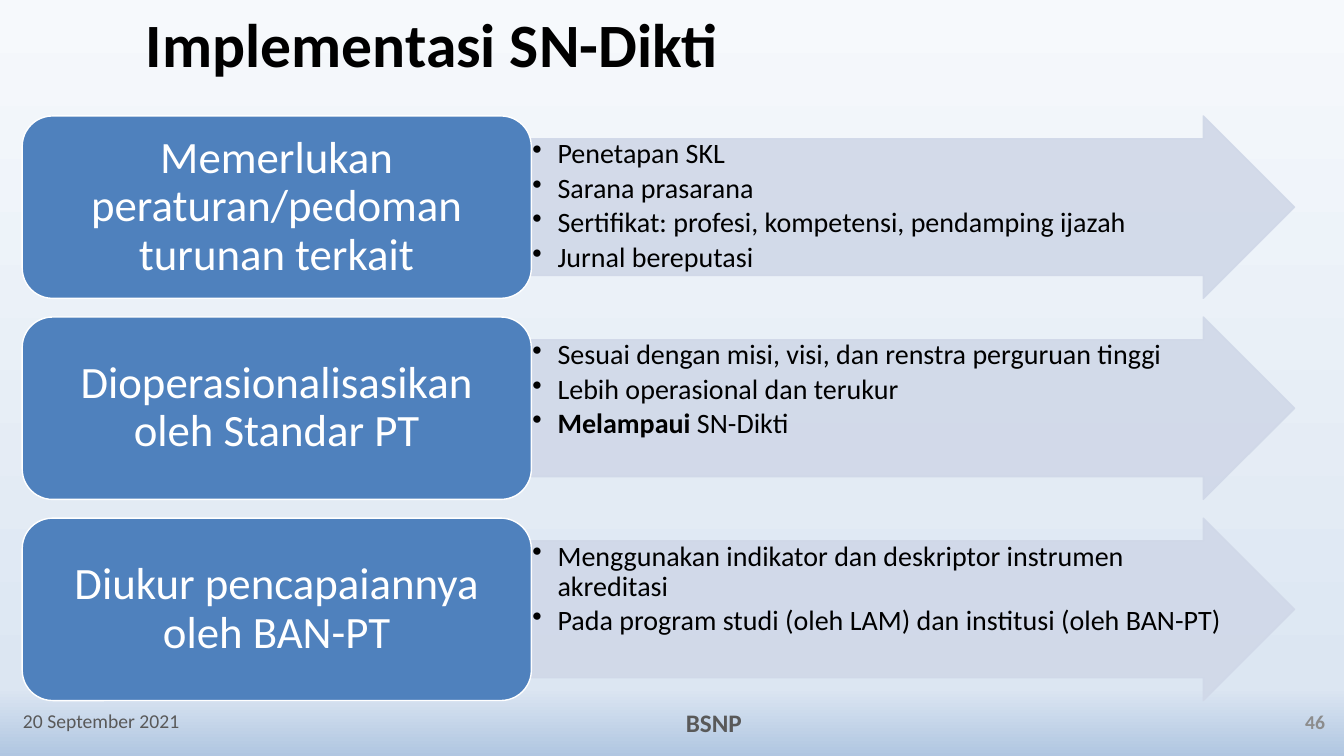
import pptx
import pptx.dml.color
import pptx.enum.shapes
import pptx.enum.text
import pptx.oxml
import pptx.oxml.ns
import pptx.util
from pptx.util import Inches

RGBColor = pptx.dml.color.RGBColor
PP_ALIGN = pptx.enum.text.PP_ALIGN
ANCHOR = pptx.enum.text.MSO_ANCHOR
SHAPE = pptx.enum.shapes.MSO_SHAPE
qn = pptx.oxml.ns.qn

BLACK = RGBColor(0x00, 0x00, 0x00)
WHITE = RGBColor(0xFF, 0xFF, 0xFF)
BLUE = RGBColor(0x4F, 0x81, 0xBD)
PALE = RGBColor(0xD0, 0xD8, 0xE8)
GREY = RGBColor(0x59, 0x59, 0x59)
LIGHT_GREY = RGBColor(0x8C, 0x8C, 0x8C)
BACKGROUND = [(0, "F6F9FC"), (91, "DCE6F2"), (100, "B0C6E1"), (100, "CAD9EB")]

# Each row: label, then bullets made of (text, bold) runs
ROWS = [
    ("Memerlukan peraturan/pedoman turunan terkait", [
        [("Penetapan SKL", False)],
        [("Sarana prasarana", False)],
        [("Sertifikat: profesi, kompetensi, pendamping ijazah", False)],
        [("Jurnal bereputasi", False)],
    ]),
    ("Dioperasionalisasikan oleh Standar PT", [
        [("Sesuai dengan misi, visi, dan renstra perguruan tinggi", False)],
        [("Lebih operasional dan terukur", False)],
        [("Melampaui", True), (" SN-Dikti", False)],
    ]),
    ("Diukur pencapaiannya oleh BAN-PT", [
        [("Menggunakan indikator dan deskriptor instrumen akreditasi", False)],
        [("Pada program studi (oleh LAM) dan institusi (oleh BAN-PT)", False)],
    ]),
]
FIRST_TOP, LAST_TOP, ROW_HEIGHT = 1.15, 5.14, 1.81
LABEL_LEFT, LABEL_WIDTH = 0.22, 5.05
ARROW_LEFT, ARROW_WIDTH = LABEL_LEFT + LABEL_WIDTH, 7.57


class SlideBuilder:
    font = "Calibri"

    def __init__(self, prs):
        self.s = prs.slides.add_slide(prs.slide_layouts[6])

    def background(self, stops):
        fill = self.s.background.fill
        fill.gradient()
        fill.gradient_angle = 270
        gs_list = self.s.element.find(".//" + qn("a:gsLst"))
        for gs in list(gs_list):
            gs_list.remove(gs)
        for pos, colour in stops:
            gs = pptx.oxml.parse_xml(
                f'<a:gs {pptx.oxml.ns.nsdecls("a")} pos="{pos * 1000}">'
                f'<a:srgbClr val="{colour}"/></a:gs>')
            gs_list.append(gs)

    def shape(self, kind, box, fill, line, alpha=None, adjustments=()):
        sp = self.s.shapes.add_shape(kind, *map(Inches, box))
        sp.shadow.inherit = False
        sp.fill.solid()
        sp.fill.fore_color.rgb = fill
        sp.line.color.rgb = line
        sp.line.width = pptx.util.Pt(1)
        for i, value in enumerate(adjustments):
            sp.adjustments[i] = value
        if alpha:
            for clr in sp.element.spPr.iter(qn("a:srgbClr")):
                pptx.oxml.ns  # colour children live in the drawing namespace
                clr.append(pptx.oxml.parse_xml(
                    f'<a:alpha {pptx.oxml.ns.nsdecls("a")} val="{alpha * 1000}"/>'))
        return sp

    def text(self, box, paragraphs, size, colour, align=PP_ALIGN.LEFT,
             anchor=ANCHOR.MIDDLE, insets=(0.1, 0.05), spacing=None, bullets=False):
        tf = self.s.shapes.add_textbox(*map(Inches, box)).text_frame
        tf.word_wrap = True
        tf.vertical_anchor = anchor
        tf.margin_left = tf.margin_right = Inches(insets[0])
        tf.margin_top = tf.margin_bottom = Inches(insets[1])
        for i, runs in enumerate(paragraphs):
            p = tf.paragraphs[0] if i == 0 else tf.add_paragraph()
            p.alignment = align
            p.line_spacing = spacing
            if bullets:
                self.bullet(p)
            for words, bold in runs:
                r = p.add_run()
                r.text = words
                r.font.name = self.font
                r.font.size = pptx.util.Pt(size)
                r.font.bold = bold
                r.font.color.rgb = colour

    def bullet(self, p):
        p.level = 1
        p.space_after = pptx.util.Pt(3)
        pPr = p._p.get_or_add_pPr()
        pPr.set("marL", str(Inches(0.25)))
        pPr.set("indent", str(Inches(-0.25)))
        pPr.append(pptx.oxml.parse_xml(
            f'<a:buChar {pptx.oxml.ns.nsdecls("a")} char="•"/>'))


def main():
    prs = pptx.Presentation()
    prs.slide_width = Inches(13.33)
    prs.slide_height = Inches(7.5)
    slide = SlideBuilder(prs)
    slide.background(BACKGROUND)

    # Title
    slide.text((1.35, 0, 11.5, 0.94), [[("Implementasi SN-Dikti", True)]],
               44, BLACK, spacing=0.9)

    # Footer
    slide.text((0.13, 6.95, 3, 0.4), [[("20 September 2021", False)]], 14, GREY)
    slide.text((4.83, 6.97, 4.5, 0.4), [[("BSNP", True)]], 18, GREY, PP_ALIGN.CENTER)
    slide.text((10.24, 6.96, 3, 0.4), [[("46", True)]], 14, LIGHT_GREY, PP_ALIGN.RIGHT)

    # Rows: arrow with bullets, then the label box
    step = (LAST_TOP - FIRST_TOP) / (len(ROWS) - 1)
    for i, (label, points) in enumerate(ROWS):
        top = FIRST_TOP + i * step
        slide.shape(SHAPE.RIGHT_ARROW, (ARROW_LEFT, top, ARROW_WIDTH, ROW_HEIGHT),
                    PALE, PALE, alpha=90, adjustments=(0.75, 0.5))
        slide.text((ARROW_LEFT, top + ROW_HEIGHT / 8, 6.89, ROW_HEIGHT * 0.75), points,
                   20, BLACK, anchor=ANCHOR.TOP, insets=(0.01, 0.01),
                   spacing=0.9, bullets=True)
        slide.shape(SHAPE.ROUNDED_RECTANGLE, (LABEL_LEFT, top, LABEL_WIDTH, ROW_HEIGHT),
                    BLUE, WHITE)
        slide.text((LABEL_LEFT + 0.09, top + 0.09, LABEL_WIDTH - 0.18, ROW_HEIGHT - 0.18),
                   [[(label, False)]], 32, WHITE, PP_ALIGN.CENTER,
                   insets=(0.13, 0.07), spacing=0.9)

    prs.save("out.pptx")


if __name__ == "__main__":
    main()
